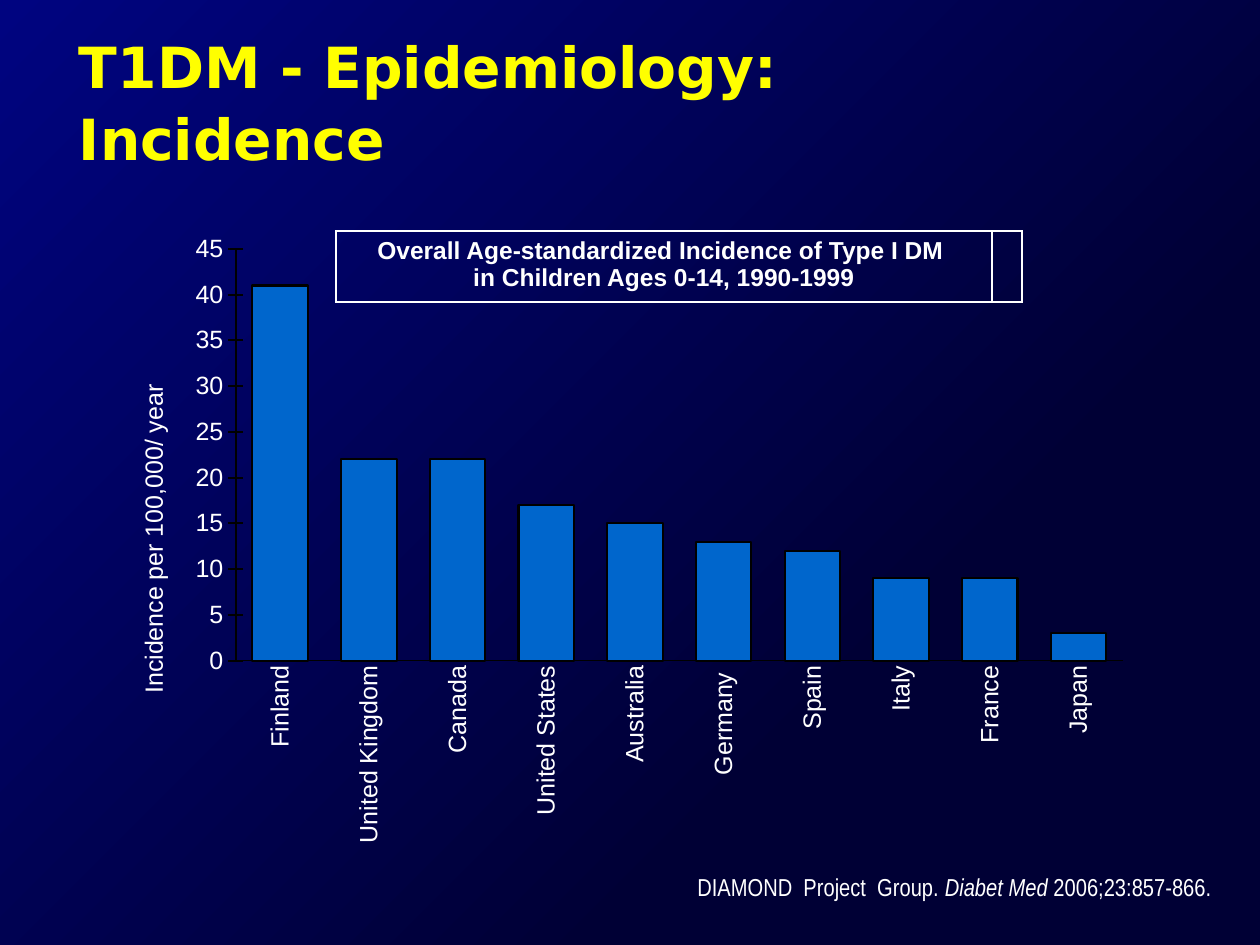
from lxml import etree
from pptx import Presentation
from pptx.chart.data import CategoryChartData
from pptx.dml.color import RGBColor
from pptx.enum.chart import XL_CHART_TYPE, XL_TICK_MARK
from pptx.enum.text import MSO_ANCHOR, PP_ALIGN
from pptx.oxml import parse_xml
from pptx.oxml.ns import nsdecls, qn
from pptx.util import Pt

COLUMNS = XL_CHART_TYPE.COLUMN_CLUSTERED
TICK_NONE, TICK_CROSS = XL_TICK_MARK.NONE, XL_TICK_MARK.CROSS
MIDDLE, TOP = MSO_ANCHOR.MIDDLE, MSO_ANCHOR.TOP
LEFT, CENTER, RIGHT = PP_ALIGN.LEFT, PP_ALIGN.CENTER, PP_ALIGN.RIGHT

EMU_PER_PX = 914400 / 126
COLORS = {"navy": "000035", "blue": "000480", "bar": "0066CC",
          "title": "FFFF00", "text": "FFFFFF", "line": "000000"}
INCIDENCE = {"Finland": 41, "United Kingdom": 22, "Canada": 22,
             "United States": 17, "Australia": 15, "Germany ": 13,
             "Spain": 12, "Italy": 9, "France": 9, "Japan": 3}
PLOT_AREA = {"x": 0.105, "y": 0.059, "w": 0.889, "h": 0.622}


def px(*lengths):
    """Turn pixel lengths into EMU."""
    return [round(length * EMU_PER_PX) for length in lengths]


def rgb(name):
    """Look up a named colour."""
    return RGBColor.from_string(COLORS[name])


def style_font(font, size, color="text", face="Arial", bold=False, italic=False):
    """Apply a complete text format to a font."""
    font.name, font.size = face, Pt(size)
    font.bold, font.italic = bold, italic
    font.color.rgb = rgb(color)


def write_text(frame, parts, align=LEFT, spacing=None, inset=(0, 0), italics=(), **style):
    """Write the parts as runs of one paragraph, with line breaks where they hold one."""
    frame.word_wrap = True
    frame.margin_left = frame.margin_right = px(inset[0])[0]
    frame.margin_top = frame.margin_bottom = px(inset[1])[0]
    paragraph = frame.paragraphs[0]
    paragraph.alignment = align
    if spacing:
        paragraph.line_spacing = spacing
    for part in parts:
        for row, line in enumerate(part.split("\n")):
            if row:
                paragraph.add_line_break()
            run = paragraph.add_run()
            run.text = line
            style_font(run.font, italic=part in italics, **style)


def add_label(slide, box, parts, anchor=TOP, **layout):
    """Add a text box."""
    frame = slide.shapes.add_textbox(*px(*box)).text_frame
    frame.vertical_anchor = anchor
    write_text(frame, parts, **layout)


def paint_background(slide):
    """Shade the slide from blue at the top left to navy at the bottom right."""
    fill = slide.background.fill
    fill.gradient()
    for stop, (position, color) in zip(fill.gradient_stops, [(0.3, "navy"), (1, "blue")]):
        stop.position = position
        stop.color.rgb = rgb(color)
        for modifier in list(stop.color._color._xClr):
            stop.color._color._xClr.remove(modifier)
    gradient = next(slide._element.iter(qn("a:gradFill")))
    gradient.replace(gradient.find(qn("a:lin")), parse_xml(
        f'<a:path {nsdecls("a")} path="circle">'
        '<a:fillToRect l="100000" t="100000"/></a:path>'))


def place_plot(chart):
    """Fix the inner plot area as fractions of the chart."""
    plot_area = chart._chartSpace.chart.plotArea
    for old_layout in plot_area.findall(qn("c:layout")):
        plot_area.remove(old_layout)
    layout = etree.Element(qn("c:layout"))
    manual = etree.SubElement(layout, qn("c:manualLayout"))
    settings = {"layoutTarget": "inner", "xMode": "edge", "yMode": "edge", **PLOT_AREA}
    for tag, value in settings.items():
        etree.SubElement(manual, qn(f"c:{tag}")).set("val", str(value))
    plot_area.insert(0, layout)


def style_axis(axis, tick, width):
    """Give an axis its line, tick marks and label font."""
    axis.has_major_gridlines = False
    axis.major_tick_mark, axis.minor_tick_mark = tick, TICK_NONE
    axis.format.line.color.rgb = rgb("line")
    axis.format.line.width = Pt(width)
    style_font(axis.tick_labels.font, 14.3)


def add_incidence_chart(slide, box):
    """Add the column chart of incidence by country."""
    data = CategoryChartData()
    data.categories = list(INCIDENCE)
    data.add_series("Series 1", list(INCIDENCE.values()))
    chart = slide.shapes.add_chart(COLUMNS, *px(*box), data).chart
    chart.has_legend = chart.has_title = False
    style_font(chart.font, 14.3)

    countries, rate = chart.category_axis, chart.value_axis
    style_axis(countries, TICK_NONE, 0.3)
    style_axis(rate, TICK_CROSS, 1.19)
    countries._element.find(qn("c:txPr")).find(qn("a:bodyPr")).set("rot", "-5400000")
    rate.minimum_scale, rate.maximum_scale, rate.major_unit = 0, 45, 5
    write_text(rate.axis_title.text_frame, ["Incidence per 100,000/ year"],
               align=CENTER, size=14.3)
    rate.axis_title.text_frame._txBody.find(qn("a:bodyPr")).set("rot", "-5400000")

    plot = chart.plots[0]
    plot.gap_width, plot.vary_by_categories = 60, False
    bars = plot.series[0].format
    bars.fill.solid()
    bars.fill.fore_color.rgb = rgb("bar")
    bars.line.color.rgb = rgb("line")
    bars.line.width = Pt(1.19)
    place_plot(chart)


def add_caption_table(slide, box, column_widths, caption):
    """Add the unfilled one-row table that carries the chart caption."""
    table = slide.shapes.add_table(1, len(column_widths), *px(*box)).table
    table.first_row = table.horz_banding = False
    for column, width in zip(table.columns, px(*column_widths)):
        column.width = width
    for cell in table.iter_cells():
        cell.fill.background()
    caption_cell = table.cell(0, 0)
    write_text(caption_cell.text_frame, [caption], align=CENTER, size=14, bold=True)
    inset = px(6)[0]
    caption_cell.margin_left = caption_cell.margin_right = inset
    caption_cell.margin_top = caption_cell.margin_bottom = inset


def main():
    """Build the slide and save it."""
    deck = Presentation()
    deck.slide_width, deck.slide_height = px(1260, 945)
    slide = deck.slides.add_slide(deck.slide_layouts[6])
    paint_background(slide)
    add_incidence_chart(slide, (131, 210, 998, 662))
    add_label(slide, (66, 21, 1024, 158), ["T1DM - Epidemiology: Incidence"],
              anchor=MIDDLE, inset=(13, 6), spacing=1.05,
              size=32.4, color="title", face="DejaVu Sans", bold=True)
    add_caption_table(slide, (336, 231, 673, 52), (656, 17),
                      "Overall Age-standardized Incidence of Type I DM \n"
                      "in Children Ages 0-14, 1990-1999")
    journal = "Diabet Med "
    add_label(slide, (503, 872, 714, 59),
              ["DIAMOND  Project  Group. ", journal, "2006;23:857-866. "],
              align=RIGHT, italics=(journal,), size=14, face="Arial Narrow")
    deck.save("out.pptx")


if __name__ == "__main__":
    main()
